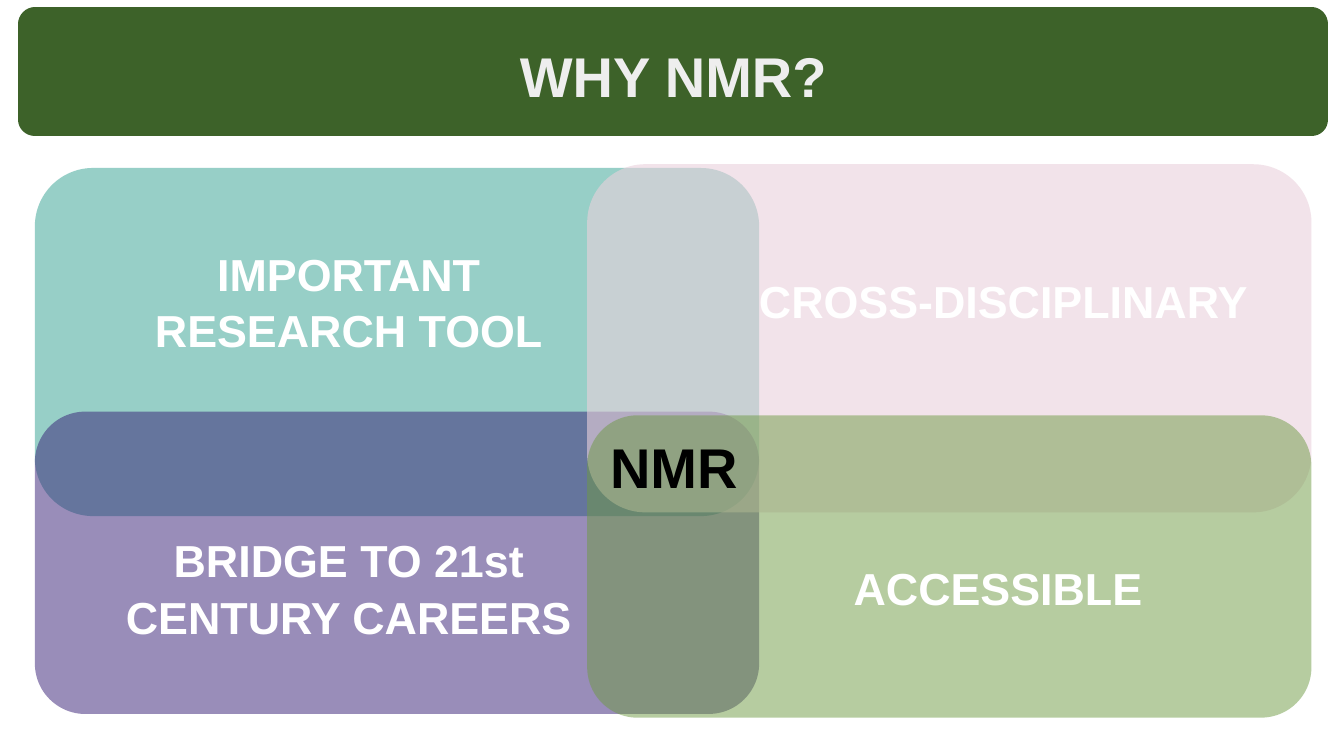
from pptx import Presentation
from pptx.dml.color import RGBColor
from pptx.enum.shapes import MSO_SHAPE
from pptx.enum.text import MSO_AUTO_SIZE, PP_ALIGN
from pptx.oxml.ns import qn
from pptx.util import Pt
from lxml import etree

RECTANGLE = MSO_SHAPE.RECTANGLE
ROUNDED = MSO_SHAPE.ROUNDED_RECTANGLE
CENTER = PP_ALIGN.CENTER
GROW = MSO_AUTO_SIZE.SHAPE_TO_FIT_TEXT

FONT = "Arial"
INSET = 7.2
GREEN, WHITE = "3D6229", "FFFFFF"

# Tile grid: two overlapping columns
LEFT, RIGHT = 18.7, 314.6
TILE_WIDTH, UPPER_HEIGHT, LOWER_HEIGHT = 388, 186.5, 162


def paint(color_format, color):
    color_format.solid()
    color_format.fore_color.rgb = RGBColor.from_string(color)


def add_panel(shapes, kind, box, color, opacity=100):
    shape = shapes.add_shape(kind, *map(Pt, box))
    shape.shadow.inherit = False
    paint(shape.fill, color)
    shape.line.fill.background()
    if opacity < 100:
        color_element = shape.fill._xPr.find(qn("a:solidFill"))[0]
        etree.SubElement(color_element, qn("a:alpha"), val=str(opacity * 1000))
    return shape


def add_label(shapes, box, text, size, color):
    frame = shapes.add_textbox(*map(Pt, box)).text_frame
    frame.word_wrap = True
    frame.auto_size = GROW
    frame.margin_left = frame.margin_right = Pt(INSET)
    frame.margin_top = frame.margin_bottom = Pt(INSET)
    paragraph = frame.paragraphs[0]
    paragraph.alignment = CENTER
    paragraph.line_spacing = 1.05
    run = paragraph.add_run()
    run.text = text
    run.font.name = FONT
    run.font.size = Pt(size)
    run.font.bold = True
    run.font.color.rgb = RGBColor.from_string(color)


def add_header(shapes, box, text):
    banner = add_panel(shapes, RECTANGLE, box, GREEN)
    # A thick line with round joins gives the banner its soft corners
    paint(banner.line.fill, GREEN)
    banner.line.width = Pt(18)
    etree.SubElement(banner.line.fill._xPr, qn("a:round"))
    add_label(shapes, box, text, 30, "EEEEEE")


def add_tile(shapes, box, color, opacity, text, label_offset, label_size):
    tile = add_panel(shapes, ROUNDED, box, color, opacity)
    tile.adjustments[0] = 0.167
    left, top = box[0] + label_offset[0], box[1] + label_offset[1]
    add_label(shapes, (left, top, *label_size), text, 24, WHITE)


def main():
    presentation = Presentation()
    presentation.slide_width, presentation.slide_height = Pt(720), Pt(405)
    slide = presentation.slides.add_slide(presentation.slide_layouts[6])
    shapes = slide.shapes

    # Header
    add_header(shapes, (LEFT, 13, 684, 51), "WHY NMR?")

    # Overlapping reasons, back to front
    add_tile(shapes, (LEFT, 90, TILE_WIDTH, UPPER_HEIGHT), "229988", 47,
             "IMPORTANT RESEARCH TOOL", (40.3, 33.5), (255.6, 72.7))
    add_tile(shapes, (LEFT, 220.5, TILE_WIDTH, LOWER_HEIGHT), "351C75", 50,
             "BRIDGE TO 21st CENTURY CAREERS", (40.3, 56.5), (255.6, 72.7))
    add_tile(shapes, (RIGHT, 88, TILE_WIDTH, UPPER_HEIGHT), "EAD1DC", 60,
             "CROSS-DISCIPLINARY", (76.4, 50), (293, 44))
    group = shapes.add_group_shape()
    add_tile(group.shapes, (RIGHT, 222.5, TILE_WIDTH, LOWER_HEIGHT), "6E9A43", 50,
             "ACCESSIBLE", (92.2, 69.5), (255.6, 44))

    # Shared centre
    add_label(shapes, (311, 222.5, 100, 51), "NMR", 30, "000000")

    presentation.save("out.pptx")


if __name__ == "__main__":
    main()
